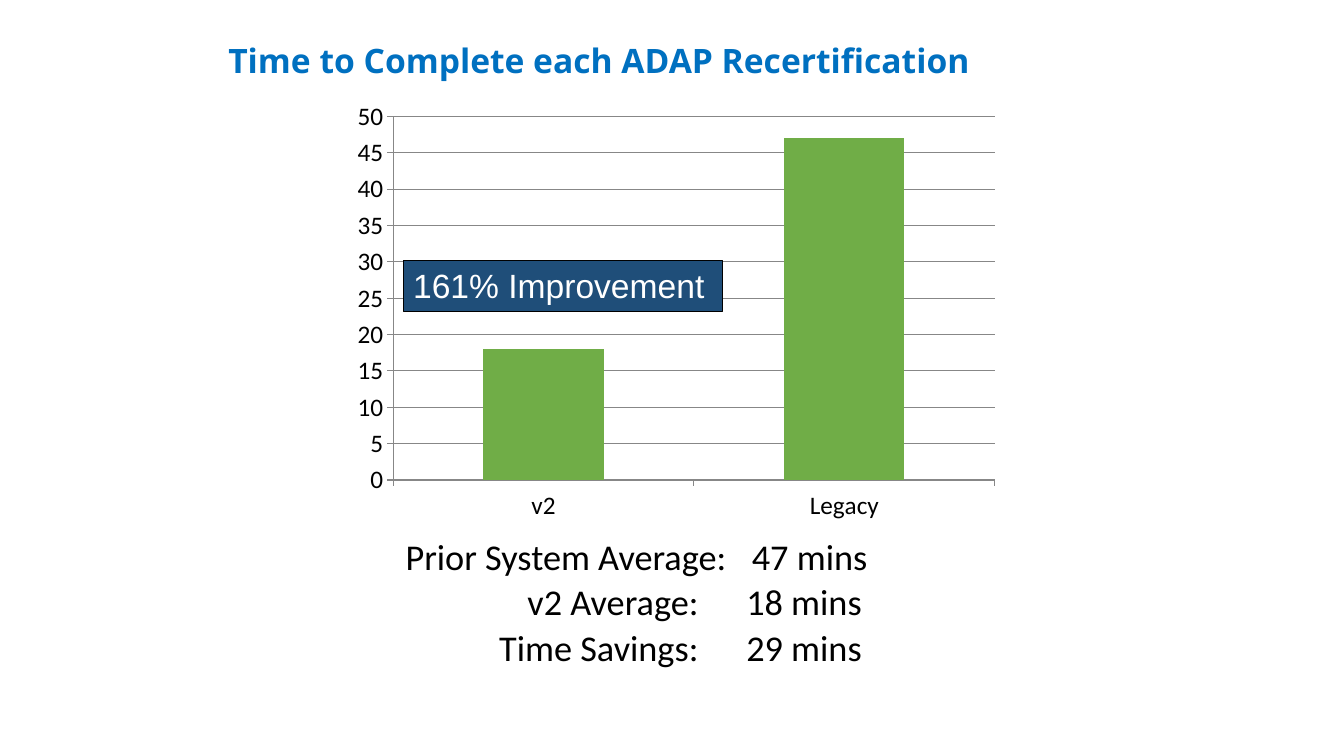
from lxml.etree import SubElement
from pptx import Presentation
from pptx.chart.data import CategoryChartData as ChartData
from pptx.dml.color import RGBColor as RGB
from pptx.enum.chart import XL_CHART_TYPE as Kind, XL_TICK_MARK as Tick
from pptx.enum.shapes import MSO_SHAPE as Shape
from pptx.enum.text import MSO_ANCHOR as Anchor, PP_ALIGN as Align
from pptx.oxml.ns import qn
from pptx.util import Pt

TITLE = "Time to Complete each ADAP Recertification"
BADGE = "161% Improvement"
BARS = {"v2": 18, "Legacy": 47}
# label, value, right edge of label, left edge of value
TIMES = [
    ("Prior System Average:", "47 mins", 350, 368),
    ("v2 Average:", "18 mins", 330, 364),
    ("Time Savings:", "29 mins", 330, 364),
]
BLUE, NAVY, GREEN = "0070C0", "1F4E79", "70AD47"
BLACK, WHITE, GRAY = "000000", "FFFFFF", "878787"


def color(code):
    return RGB.from_string(code)


def style(font, name, size, code, bold=False):
    font.name, font.size, font.bold = name, Pt(size), bold
    font.color.rgb = color(code)


def write(para, text, *look):
    run = para.add_run()
    run.text = text
    style(run.font, *look)


def add_box(slide, *place):
    frame = slide.shapes.add_textbox(*map(Pt, place)).text_frame
    frame.word_wrap = True
    return frame


def add_tabs(para, right, left):
    tabs = SubElement(para._p.get_or_add_pPr(), qn("a:tabLst"))
    for pos, side in ((right, "r"), (left, "l")):
        SubElement(tabs, qn("a:tab"), pos=str(Pt(pos)), algn=side)


def add_title(slide):
    frame = add_box(slide, 156, 0, 648, 90)
    frame.vertical_anchor = Anchor.MIDDLE
    para = frame.paragraphs[0]
    para.line_spacing = 0.9
    write(para, TITLE, "Open Sans", 24, BLUE, True)


def add_times(slide):
    frame = add_box(slide, 162, 384, 648, 102)
    for i, (label, value, right, left) in enumerate(TIMES):
        para = frame.add_paragraph() if i else frame.paragraphs[0]
        para.line_spacing = 0.8
        if i:
            para.space_before = Pt(7.5)
        add_tabs(para, right, left)
        write(para, f"\t{label}\t{value}", "Calibri", 25.9, BLACK)


def add_bars(slide):
    data = ChartData()
    data.categories = list(BARS)
    data.add_series("Series 1", list(BARS.values()))
    place = map(Pt, (246, 66, 474, 312))
    chart = slide.shapes.add_chart(Kind.COLUMN_CLUSTERED, *place, data).chart
    chart.has_legend = chart.has_title = False
    style(chart.font, "Calibri", 18, BLACK)
    plot = chart.plots[0]
    plot.gap_width, plot.vary_by_categories = 150, False
    fill = plot.series[0].format.fill
    fill.solid()
    fill.fore_color.rgb = color(GREEN)
    base, scale = chart.category_axis, chart.value_axis
    scale.minimum_scale, scale.maximum_scale, scale.major_unit = 0, 50, 5
    scale.has_major_gridlines = True
    for axis in (base, scale):
        axis.major_tick_mark, axis.minor_tick_mark = Tick.OUTSIDE, Tick.NONE
    for part in (base, scale, scale.major_gridlines):
        part.format.line.color.rgb = color(GRAY)
        part.format.line.width = Pt(0.75)


def add_badge(slide):
    place = map(Pt, (288, 186, 228, 36.5))
    badge = slide.shapes.add_shape(Shape.RECTANGLE, *place)
    badge.shadow.inherit = False
    badge.fill.solid()
    badge.fill.fore_color.rgb = color(NAVY)
    badge.line.color.rgb = color(BLACK)
    badge.line.width = Pt(0.75)
    frame = badge.text_frame
    frame.word_wrap, frame.vertical_anchor = True, Anchor.TOP
    para = frame.paragraphs[0]
    para.alignment = Align.LEFT
    write(para, BADGE, "Arial", 24, WHITE)


def main():
    deck = Presentation()
    deck.slide_width, deck.slide_height = Pt(960), Pt(540)
    slide = deck.slides.add_slide(deck.slide_layouts[6])
    for add in (add_title, add_times, add_bars, add_badge):
        add(slide)
    deck.save("out.pptx")


if __name__ == "__main__":
    main()
